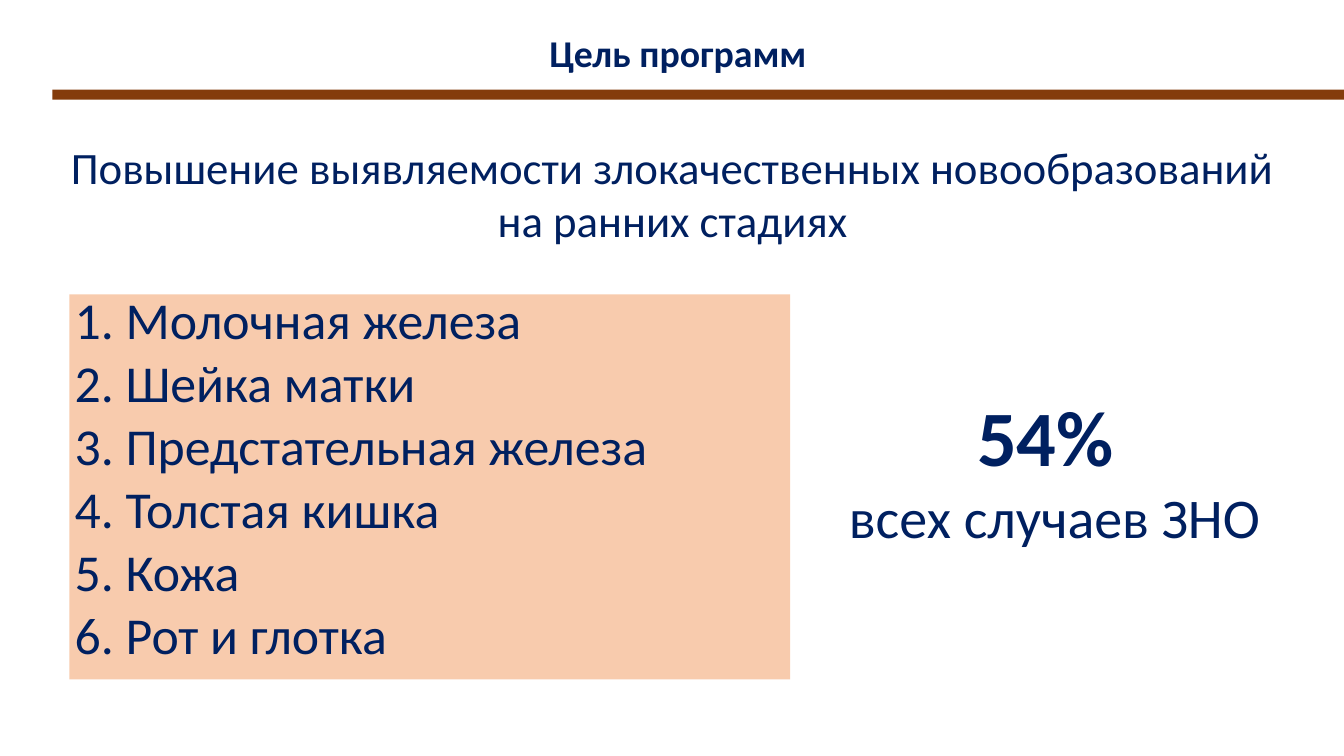
import pptx
import pptx.dml.color
import pptx.enum.shapes
import pptx.enum.text
import pptx.oxml
import pptx.oxml.ns
import pptx.util
from pptx.util import Cm

NAVY = pptx.dml.color.RGBColor(0x00, 0x20, 0x60)
PEACH = pptx.dml.color.RGBColor(0xF8, 0xCB, 0xAD)
BROWN = pptx.dml.color.RGBColor(0x84, 0x3C, 0x0C)
CENTER = pptx.enum.text.PP_ALIGN.CENTER
LEFT = pptx.enum.text.PP_ALIGN.LEFT


class GoalSlide:
    """Holds the text style and the slide being filled."""

    font_name = "Calibri"

    def __init__(self, presentation):
        self.slide = presentation.slides.add_slide(presentation.slide_layouts[1])

    def _place(self, shape, box):
        shape.left, shape.top, shape.width, shape.height = map(Cm, box)

    def _write(self, shape, lines, margin, align=CENTER):
        """Fill a shape with lines given as (text, size, bold)."""
        frame = shape.text_frame
        frame.word_wrap = True
        frame.auto_size = pptx.enum.text.MSO_AUTO_SIZE.NONE
        frame.vertical_anchor = pptx.enum.text.MSO_ANCHOR.TOP
        frame.margin_left = frame.margin_right = Cm(margin)
        frame.margin_top = frame.margin_bottom = Cm(margin)
        frame.text = "\n".join(text for text, _, _ in lines)
        for paragraph, (_, size, bold) in zip(frame.paragraphs, lines):
            paragraph.alignment = align
            paragraph.font.name = self.font_name
            paragraph.font.size = pptx.util.Pt(size)
            paragraph.font.bold = bold
            paragraph.font.color.rgb = NAVY

    def title(self, text, box, size):
        heading = self.slide.shapes.title
        self._place(heading, box)
        self._write(heading, [(text, size, True)], 0.18)

    def numbered_list(self, items, box, size):
        body = self.slide.placeholders[1]
        self._place(body, box)
        body.fill.solid()
        body.fill.fore_color.rgb = PEACH
        lines = [(f"{number}. {item}", size, False)
                 for number, item in enumerate(items, 1)]
        self._write(body, lines, 0.13, LEFT)
        for paragraph in body.text_frame.paragraphs:
            paragraph.line_spacing = 0.8
            paragraph.space_before = pptx.util.Pt(9.5)
            # Hanging indent, no bullet: the number is part of the text
            properties = paragraph._p.get_or_add_pPr()
            properties.set("marL", str(Cm(0.64)))
            properties.set("indent", str(Cm(-0.64)))
            no_bullet = pptx.oxml.parse_xml(
                f"<a:buNone {pptx.oxml.ns.nsdecls('a')}/>")
            properties.append(no_bullet)

    def text(self, lines, box, margin):
        self._write(self.slide.shapes.add_textbox(*map(Cm, box)), lines, margin)

    def bar(self, box):
        rule = self.slide.shapes.add_shape(
            pptx.enum.shapes.MSO_SHAPE.RECTANGLE, *map(Cm, box))
        rule.shadow.inherit = False
        rule.fill.solid()
        rule.fill.fore_color.rgb = BROWN
        rule.line.fill.background()


def main():
    presentation = pptx.Presentation()
    presentation.slide_width = Cm(33.87)
    presentation.slide_height = Cm(19.05)
    goal = GoalSlide(presentation)

    # Heading and rule
    goal.title("Цель программ", (1.87, 0.56, 30.43, 1.6), 27)
    goal.bar((1.32, 2.26, 32.55, 0.25))

    # Goal statement
    statement = ("Повышение выявляемости злокачественных новообразований "
                 "на ранних стадиях")
    goal.text([(statement, 32, False)], (1.12, 3.38, 31.67, 2.87), 0.13)

    # Cancer sites covered by screening
    sites = ["Молочная железа", "Шейка матки", "Предстательная железа",
             "Толстая кишка", "Кожа", "Рот и глотка"]
    goal.numbered_list(sites, (1.75, 7.42, 18.16, 9.7), 37)

    # Share of all cases
    goal.text([("54% ", 56, True), ("всех случаев ЗНО", 40, False)],
              (19.3, 9.6, 14.55, 4.29), 0.18)

    presentation.save("out.pptx")


if __name__ == "__main__":
    main()
